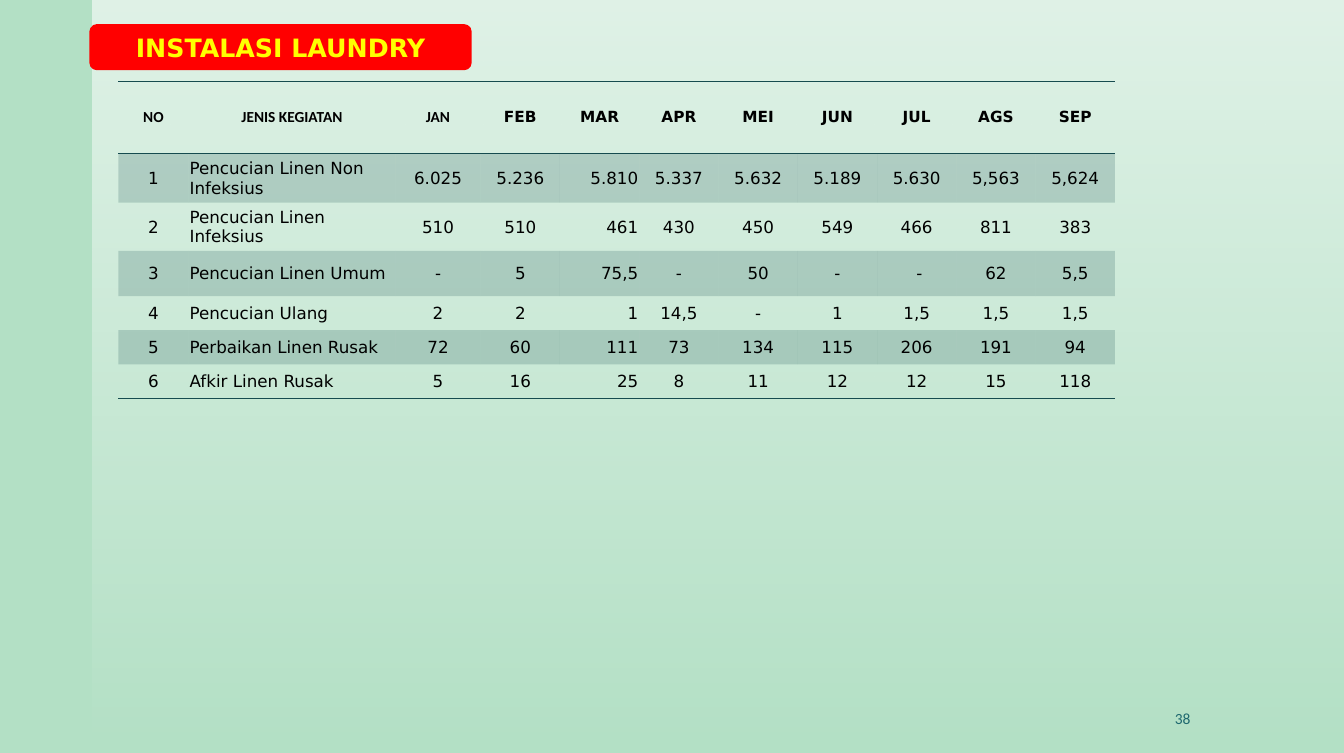
"""Build the laundry installation slide with its monthly activity table."""
from lxml.etree import SubElement
from pptx import Presentation
from pptx.dml.color import RGBColor as Rgb
from pptx.enum.shapes import MSO_SHAPE as Shape
from pptx.enum.text import MSO_ANCHOR as Anchor, PP_ALIGN as Align
from pptx.oxml import parse_xml
from pptx.oxml.ns import nsdecls, qn
from pptx.util import Inches, Pt

TITLE = "INSTALASI LAUNDRY"
PAGE_NUMBER = "38"
HEADINGS = ["NO", "JENIS KEGIATAN", "JAN", "FEB", "MAR", "APR", "MEI", "JUN", "JUL", "AGS", "SEP"]
ACTIVITIES = [
    ("Pencucian Linen Non Infeksius",
     ["6.025", "5.236", "5.810", "5.337", "5.632", "5.189", "5.630", "5,563", "5,624"]),
    ("Pencucian Linen Infeksius",
     ["510", "510", "461", "430", "450", "549", "466", "811", "383"]),
    ("Pencucian Linen Umum",
     ["-", "5", "75,5", "-", "50", "-", " -", "62", "5,5"]),
    ("Pencucian Ulang",
     ["2", "2", "1", "14,5", "-", "1", "1,5", "1,5", "1,5"]),
    ("Perbaikan Linen Rusak",
     ["72", "60", "111", "73", "134", "115", "206", "191", "94"]),
    ("Afkir Linen Rusak",
     ["5", "16", "25", "8", "11", "12", "12", "15", "118"]),
]

COLORS = {"mint": "B3E0C5", "white": "FFFFFF", "teal": "164B4F", "number": "1F696F",
          "red": "FF0000", "yellow": "FFFF00", "black": "000000"}
BODY_FONT, HEAD_FONT = "DejaVu Sans", "Calibri"
SLIDE_W, SLIDE_H = 13.39, 7.5
PLACES = {
    "panel": (6.87, 0, 93.13, 100),
    "number": (66.02, 92.67, 23.3, 5.33),
    "table": (8.81, 10.8, 74.09, 42),
    "title": (6.65, 3.2, 28.45, 6.13),
}
COLUMN_WIDTHS = [0.7, 2.06, 0.85] + [0.79] * 8
ROW_HEIGHTS = [0.72, 0.49, 0.48, 0.45] + [0.34] * 3
COLUMN_ALIGN = {1: Align.LEFT, 4: Align.RIGHT}
HEAD_MARGINS = {"margin_left": 0.2, "margin_top": 0.08, "margin_right": 0.2, "margin_bottom": 0.08}
BODY_MARGINS = {"margin_left": 0.01, "margin_top": 0.01, "margin_right": 0.01, "margin_bottom": 0}
NO_GRID_STYLE = "{2D5ABB26-0587-4C30-8999-92F81FD0307C}"


def place(part):
    """Turn percentages of the slide into lengths."""
    return [Inches(share / 100 * side)
            for share, side in zip(PLACES[part], (SLIDE_W, SLIDE_H) * 2)]


def rgb(color):
    """Look up a named colour."""
    return Rgb.from_string(COLORS[color])


def write(frame, text, align, color, **font_format):
    """Write one formatted line into a text frame."""
    line = frame.paragraphs[0]
    line.alignment = align
    run = line.add_run()
    run.text = text
    run.font.color.rgb = rgb(color)
    for key, value in font_format.items():
        setattr(run.font, key, value)


def add_block(slide, kind, part):
    """Add a preset shape without shadow or outline."""
    block = slide.shapes.add_shape(kind, *place(part))
    block.shadow.inherit = False
    block.line.fill.background()
    return block


def set_alpha(fill_xml, percents):
    """Give each colour of a fill its opacity."""
    for color, percent in zip(fill_xml.iter(qn("a:srgbClr")), percents):
        SubElement(color, qn("a:alpha")).set("val", str(percent * 1000))


def add_borders(cell, sides):
    """Rule the named sides of a cell, in schema order."""
    for index, side in enumerate(sides):
        cell._tc.get_or_add_tcPr().insert(index, parse_xml(
            f'<a:ln{side} {nsdecls("a")} w="{Pt(1)}"><a:solidFill>'
            f'<a:srgbClr val="{COLORS["teal"]}"/></a:solidFill></a:ln{side}>'))


def add_panel(slide):
    """Add the pale panel that fades downwards."""
    panel = add_block(slide, Shape.RECTANGLE, "panel")
    panel.fill.gradient()
    panel.fill.gradient_angle = 270
    for stop in panel.fill.gradient_stops:
        stop.color.rgb = rgb("white")
    set_alpha(panel._element.spPr, (60, 0))


def add_activity_table(slide):
    """Add the table of activities by month."""
    rows = [HEADINGS] + [[str(number), activity, *counts]
                         for number, (activity, counts) in enumerate(ACTIVITIES, 1)]
    table = slide.shapes.add_table(len(rows), len(HEADINGS), *place("table")).table
    table.first_row = table.horz_banding = False
    table._tbl.tblPr.find(qn("a:tableStyleId")).text = NO_GRID_STYLE
    for column, width in zip(table.columns, COLUMN_WIDTHS):
        column.width = Inches(width)
    for row, height in zip(table.rows, ROW_HEIGHTS):
        row.height = Inches(height)
    border_sides = {0: "TB", len(rows) - 1: "B"}
    for r, texts in enumerate(rows):
        header = r == 0
        for c, text in enumerate(texts):
            cell = table.cell(r, c)
            cell.vertical_anchor = Anchor.MIDDLE
            for margin, inches in (HEAD_MARGINS if header else BODY_MARGINS).items():
                setattr(cell, margin, Inches(inches))
            align = Align.CENTER if header else COLUMN_ALIGN.get(c, Align.CENTER)
            write(cell.text_frame, text, align, "black", size=Pt(11 if header else 12),
                  bold=header, name=HEAD_FONT if header and c < 3 else BODY_FONT)
            if r % 2:
                cell.fill.solid()
                cell.fill.fore_color.rgb = rgb("teal")
                set_alpha(cell._tc.tcPr, (20,))
            else:
                cell.fill.background()
            add_borders(cell, border_sides.get(r, ""))


def main():
    """Assemble and save the slide."""
    deck = Presentation()
    deck.slide_width, deck.slide_height = Inches(SLIDE_W), Inches(SLIDE_H)
    slide = deck.slides.add_slide(deck.slide_layouts[6])
    slide.background.fill.solid()
    slide.background.fill.fore_color.rgb = rgb("mint")
    add_panel(slide)

    number = slide.shapes.add_textbox(*place("number")).text_frame
    number.word_wrap = True
    number.vertical_anchor = Anchor.MIDDLE
    write(number, PAGE_NUMBER, Align.RIGHT, "number", size=Pt(11.1), name=HEAD_FONT)

    add_activity_table(slide)

    title = add_block(slide, Shape.ROUNDED_RECTANGLE, "title")
    title.fill.solid()
    title.fill.fore_color.rgb = rgb("red")
    title.text_frame.vertical_anchor = Anchor.MIDDLE
    write(title.text_frame, TITLE, Align.CENTER, "yellow",
          size=Pt(18.1), name=BODY_FONT, bold=True)
    deck.save("out.pptx")


if __name__ == "__main__":
    main()
